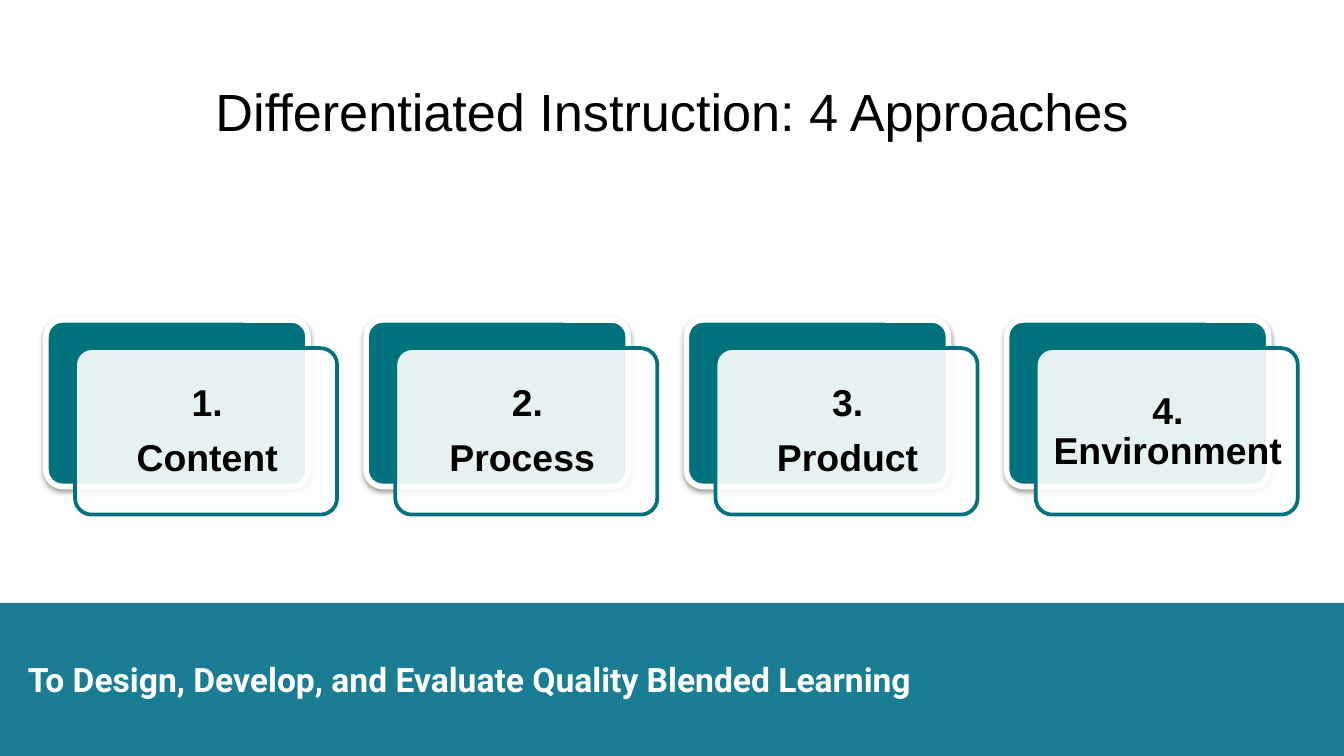
from lxml import etree
from pptx import Presentation
from pptx.dml.color import RGBColor
from pptx.enum.shapes import MSO_SHAPE
from pptx.enum.text import MSO_ANCHOR, PP_ALIGN
from pptx.oxml.ns import qn
from pptx.util import Pt

RECTANGLE = MSO_SHAPE.RECTANGLE
ROUNDED = MSO_SHAPE.ROUNDED_RECTANGLE
LEFT, CENTER = PP_ALIGN.LEFT, PP_ALIGN.CENTER
TOP, MIDDLE = MSO_ANCHOR.TOP, MSO_ANCHOR.MIDDLE
TITLE_ONLY = 5

COLORS = {
    "teal": "00717D",
    "band": "1A7D94",
    "white": "FFFFFF",
    "black": "000000",
}
APPROACHES = [
    ["1.", "Content"],
    ["2.", "Process "],
    ["3.", "Product"],
    ["4. Environment"],
]
CARD_LEFT, CARD_TOP = 24.6, 171.4
CARD_SIZE = (140.4, 89.2)
CARD_PITCH = 171.55
FRONT_SHIFT = (15.6, 15.1)
LABEL_SHIFT = (18.7, 18)
LABEL_SIZE = (135.4, 84.2)


def rgb(name):
    return RGBColor.from_string(COLORS[name])


def write_text(frame, lines, size, color="black", font="Arial", bold=False,
               align=LEFT, anchor=TOP, inset=7.2, spacing=None, after=None):
    frame.word_wrap = True
    frame.vertical_anchor = anchor
    frame.margin_left = frame.margin_right = Pt(inset)
    frame.margin_top = frame.margin_bottom = Pt(inset)
    for index, line in enumerate(lines):
        para = frame.add_paragraph() if index else frame.paragraphs[0]
        para.alignment = align
        if spacing is not None:
            para.line_spacing = spacing
        if after is not None:
            para.space_after = Pt(after)
        span = para.add_run()
        span.text = line
        span.font.name = font
        span.font.size = Pt(size)
        span.font.bold = bold
        span.font.color.rgb = rgb(color)


class PageBuilder:
    def __init__(self, deck):
        self.page = deck.slides.add_slide(deck.slide_layouts[TITLE_ONLY])

    def title(self, text, left, top, width, height):
        box = self.page.shapes.title
        box.left, box.top = Pt(left), Pt(top)
        box.width, box.height = Pt(width), Pt(height)
        write_text(box.text_frame, [text], 28, align=CENTER)

    def text(self, lines, left, top, width, height, **style):
        box = self.page.shapes.add_textbox(Pt(left), Pt(top), Pt(width), Pt(height))
        write_text(box.text_frame, lines, **style)

    def shape(self, kind, left, top, width, height, fill, line=None,
              line_width=0, opacity=None, shadow=False):
        box = self.page.shapes.add_shape(kind, Pt(left), Pt(top), Pt(width), Pt(height))
        box.shadow.inherit = False
        box.fill.solid()
        box.fill.fore_color.rgb = rgb(fill)
        if kind == ROUNDED:
            box.adjustments[0] = 0.1
        if line:
            box.line.color.rgb = rgb(line)
            box.line.width = Pt(line_width)
        else:
            box.line.fill.background()
        properties = box.element.spPr
        if opacity is not None:
            color = properties.find(qn("a:solidFill"))[0]
            etree.SubElement(color, qn("a:alpha"), val=str(opacity * 1000))
        if shadow:
            effects = properties.find(qn("a:effectLst"))
            outer = etree.SubElement(
                effects, qn("a:outerShdw"), blurRad=str(Pt(3.1)),
                dist=str(Pt(1.6)), dir="5400000", rotWithShape="0")
            color = etree.SubElement(outer, qn("a:srgbClr"), val=COLORS["black"])
            etree.SubElement(color, qn("a:alpha"), val="38000")

    def card(self, lines, left, top):
        self.shape(ROUNDED, left, top, *CARD_SIZE, "teal", line="white",
                   line_width=3, shadow=True)
        self.shape(ROUNDED, left + FRONT_SHIFT[0], top + FRONT_SHIFT[1], *CARD_SIZE,
                   "white", line="teal", line_width=2, opacity=90)
        self.text(lines, left + LABEL_SHIFT[0], top + LABEL_SHIFT[1], *LABEL_SIZE,
                  size=20, bold=True, align=CENTER, anchor=MIDDLE, inset=5.4,
                  spacing=0.9, after=8)


def main():
    deck = Presentation()
    deck.slide_width, deck.slide_height = Pt(720), Pt(405)
    builder = PageBuilder(deck)
    builder.title("Differentiated Instruction: 4 Approaches", 24.5, 35.3, 671, 45.4)
    builder.shape(RECTANGLE, 0, 323, 720, 82, "band")
    builder.text(["To Design, Develop, and Evaluate Quality Blended Learning"],
                 7.9, 345.6, 532, 36.7, size=18, color="white", font="Roboto", bold=True)
    for index, lines in enumerate(APPROACHES):
        builder.card(lines, CARD_LEFT + index * CARD_PITCH, CARD_TOP)
    deck.save("out.pptx")


if __name__ == "__main__":
    main()
